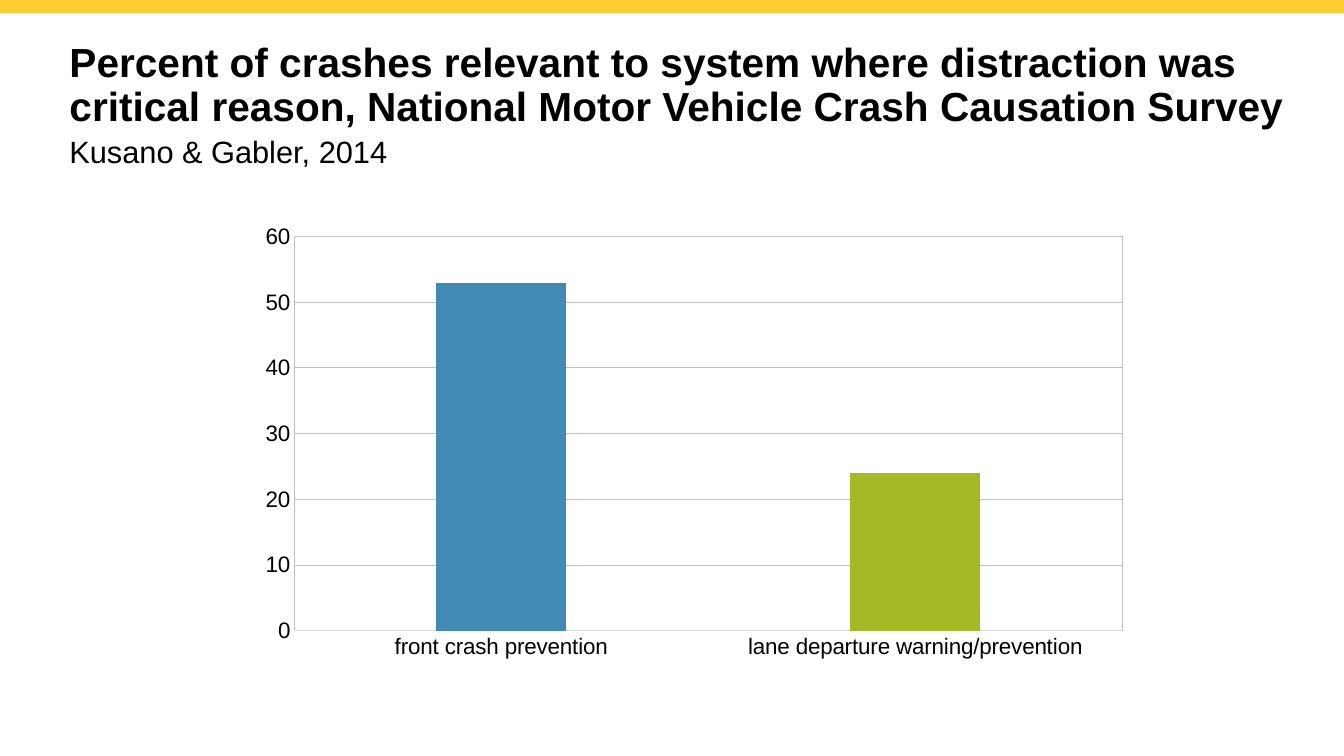
from lxml import etree
from pptx import Presentation
from pptx import util as u
from pptx.chart.data import CategoryChartData
from pptx.dml.color import RGBColor
from pptx.enum import chart as ch, shapes, text
from pptx.oxml import parse_xml
from pptx.oxml.ns import nsdecls, qn

BLACK = RGBColor(0x00, 0x00, 0x00)
YELLOW = RGBColor(0xFF, 0xCC, 0x33)
BLUE = RGBColor(0x41, 0x8A, 0xB3)
GREEN = RGBColor(0xA6, 0xB7, 0x27)
GRID = RGBColor(0xBF, 0xBF, 0xBF)
AXIS = RGBColor(0xD9, 0xD9, 0xD9)


class Deck:
    """Holds the style and the current slide."""
    font = "Arial"

    def __init__(self, prs):
        self.s = prs.slides.add_slide(prs.slide_layouts[5])

    def style(self, font, size, bold=False):
        font.name, font.size, font.bold = self.font, u.Pt(size), bold
        font.color.rgb = BLACK

    def set_text(self, sp, box, words, size, leading, bold=False):
        sp.left, sp.top, sp.width, sp.height = map(u.Cm, box)
        tf = sp.text_frame
        tf.word_wrap = True
        tf.auto_size = text.MSO_AUTO_SIZE.NONE
        tf.vertical_anchor = text.MSO_ANCHOR.TOP
        tf.margin_left = tf.margin_right = tf.margin_top = tf.margin_bottom = 0
        p = tf.paragraphs[0]
        p.alignment = text.PP_ALIGN.LEFT
        p.line_spacing = u.Pt(leading)
        p.space_before = u.Pt(0)
        r = p.add_run()
        r.text = words
        self.style(r.font, size, bold)

    def title(self, box, words, size, leading):
        self.set_text(self.s.shapes.title, box, words, size, leading, bold=True)

    def label(self, box, words, size, leading):
        sp = self.s.shapes.add_textbox(*map(u.Cm, box))
        self.set_text(sp, box, words, size, leading)

    def bar(self, box, color):
        sp = self.s.shapes.add_shape(shapes.MSO_SHAPE.RECTANGLE, *map(u.Cm, box))
        sp.shadow.inherit = False
        sp.fill.solid()
        sp.fill.fore_color.rgb = color
        sp.line.fill.background()

    def columns(self, box, values, colors, plot_box):
        data = CategoryChartData()
        data.categories = list(values)
        data.add_series("Series 1", list(values.values()))
        chart = self.s.shapes.add_chart(
            ch.XL_CHART_TYPE.COLUMN_CLUSTERED, *map(u.Cm, box), data).chart
        chart.has_legend = chart.has_title = False
        self.style(chart.font, 10)

        # Columns
        plot = chart.plots[0]
        plot.vary_by_categories = False
        plot.gap_width = 219
        series = plot.series[0]
        series.format.fill.solid()
        series.format.fill.fore_color.rgb = colors[0]
        for i, color in enumerate(colors[1:], 1):
            fill = series.points[i].format.fill
            fill.solid()
            fill.fore_color.rgb = color

        # Axes
        for axis in (chart.category_axis, chart.value_axis):
            axis.major_tick_mark = axis.minor_tick_mark = ch.XL_TICK_MARK.NONE
            self.style(axis.tick_labels.font, 16)
        line = chart.category_axis.format.line
        line.color.rgb, line.width = AXIS, u.Pt(0.75)
        axis = chart.value_axis
        axis.minimum_scale, axis.maximum_scale, axis.major_unit = 0, 60, 10
        axis.format.line.fill.background()
        line = axis.major_gridlines.format.line
        line.color.rgb, line.width = GRID, u.Pt(0.75)
        self.frame_plot(chart, plot_box)

    def frame_plot(self, chart, plot_box):
        """Place the inner plot area and outline it."""
        area = chart._chartSpace.chart.plotArea
        for old in area.findall(qn("c:layout")):
            area.remove(old)
        layout = parse_xml(f"<c:layout {nsdecls('c')}><c:manualLayout/></c:layout>")
        settings = [("layoutTarget", "inner"), ("xMode", "edge"), ("yMode", "edge"),
                    *zip("xywh", map(str, plot_box))]
        for name, value in settings:
            etree.SubElement(layout[0], qn("c:" + name)).set("val", value)
        area.insert(0, layout)
        area.append(parse_xml(
            f'<c:spPr {nsdecls("c", "a")}><a:noFill/><a:ln w="9525"><a:solidFill>'
            f'<a:srgbClr val="{GRID}"/></a:solidFill></a:ln></c:spPr>'))


def main():
    prs = Presentation()
    prs.slide_width, prs.slide_height = u.Cm(33.87), u.Cm(19.05)
    deck = Deck(prs)

    # Top band and headings
    deck.bar((0, 0, 33.87, 0.33), YELLOW)
    deck.title((1.75, 1.07, 31.22, 2.2),
               "Percent of crashes relevant to system where distraction was "
               "critical reason, National Motor Vehicle Crash Causation Survey", 29, 31)
    deck.label((1.75, 3.4, 31.22, 0.89), "Kusano & Gabler, 2014", 22, 25)

    # Crash share chart
    deck.columns((5.28, 4.6, 23.72, 13.61),
                 {"front crash prevention": 53, "lane departure warning/prevention": 24},
                 (BLUE, GREEN), (0.09, 0.1, 0.88, 0.73))

    prs.save("out.pptx")


if __name__ == "__main__":
    main()
